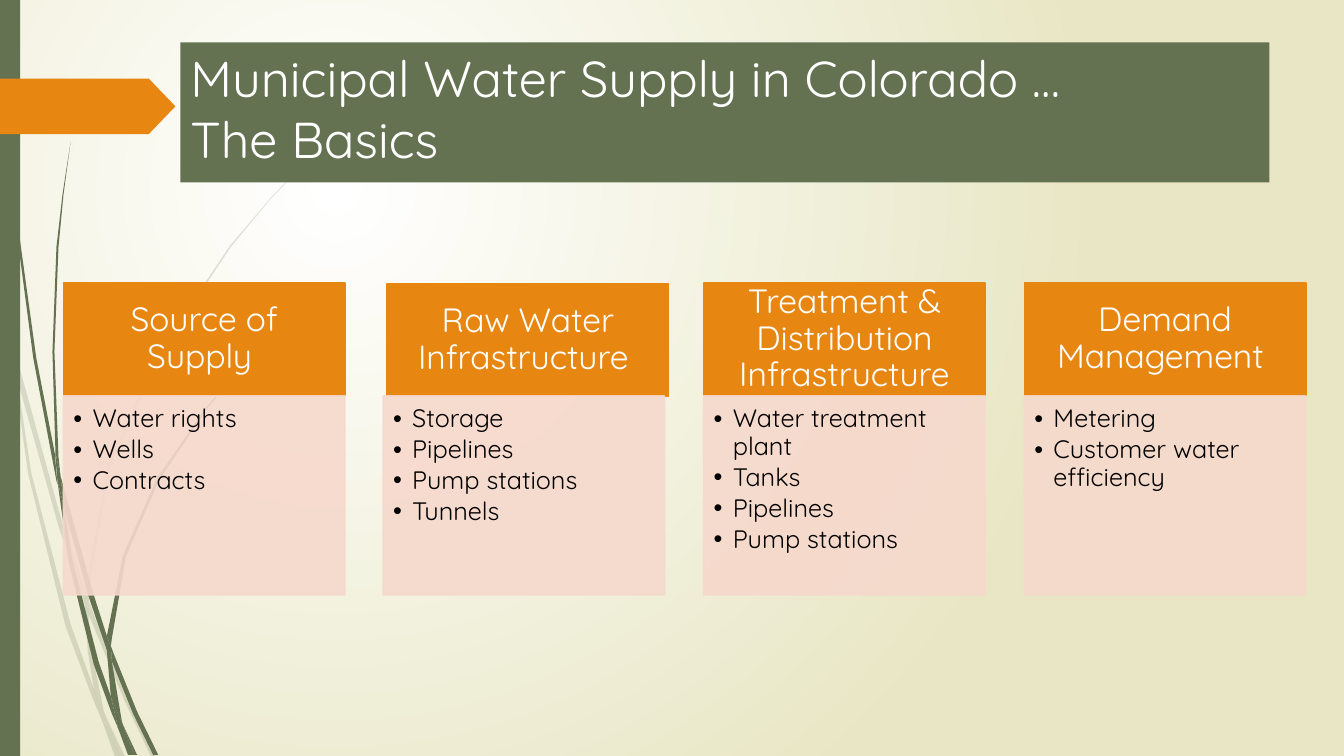
from pptx import Presentation
from pptx.dml.color import RGBColor
from pptx.enum.shapes import MSO_SHAPE
from pptx.enum.text import MSO_ANCHOR, PP_ALIGN
from pptx.oxml import parse_xml
from pptx.oxml.ns import nsdecls, qn
from pptx.util import Pt

PX = 9144
WIDTH, HEIGHT = 1333, 750
FONT = "Quicksand"
COLOURS = {
    "white": "FFFFFF",
    "sand": "E8E6C4",
    "green": "647252",
    "orange": "E78712",
    "blush": "F6D9CC",
    "black": "000000",
}

# Outlines of the pieces of grass
PALE_GRASS = [
    [(11, 350), (9, 322), (0, 282), (0, 299), (10, 344)],
    [(58, 522), (84, 599), (85, 586), (62, 520), (14, 345), (17, 376)],
    [(92, 607), (88, 596), (88, 610), (123, 694), (150, 751), (155, 751),
     (127, 692)],
    [(119, 751), (124, 751), (105, 711)],
    [(93, 683), (70, 619), (31, 469), (17, 376), (11, 350), (28, 470),
     (65, 621), (92, 693), (101, 714), (99, 707)],
    [(84, 599), (87, 646), (93, 683), (96, 692), (105, 711), (103, 706),
     (91, 646), (88, 610), (88, 608)],
    [(88, 584), (110, 462), (160, 349), (229, 245), (268, 198), (290, 175),
     (312, 154), (312, 153), (289, 175), (268, 197), (228, 244), (158, 348),
     (107, 461), (85, 584), (85, 586), (88, 596)],
    [(101, 714), (114, 751), (119, 751)],
    [(88, 608), (88, 610), (88, 596), (85, 586), (84, 599)],
    [(96, 692), (93, 683), (99, 707), (101, 714), (119, 751), (105, 711)],
]
DARK_GRASS = [
    [(7, 110), (17, 233), (33, 355), (56, 477), (57, 481), (55, 457),
     (55, 453), (36, 355), (19, 232), (8, 109), (5, 48), (4, 0), (3, 0),
     (4, 48)],
    [(88, 592), (106, 645), (106, 633), (106, 631), (93, 590), (60, 472),
     (64, 505)],
    [(113, 649), (110, 641), (111, 656), (132, 708), (152, 749), (157, 749),
     (136, 706)],
    [(110, 691), (98, 657), (72, 556), (64, 505), (57, 477), (68, 557),
     (93, 659), (111, 708), (117, 722), (116, 717)],
    [(60, 472), (58, 453), (54, 349), (58, 245), (63, 193), (70, 141),
     (62, 193), (56, 245), (52, 349), (55, 449)],
    [(133, 749), (136, 749), (122, 719)],
    [(57, 477), (64, 505), (60, 472), (55, 449), (55, 453)],
    [(111, 633), (125, 552), (158, 476), (205, 406), (231, 374), (245, 359),
     (261, 344), (260, 344), (245, 358), (231, 373), (204, 405), (156, 474),
     (122, 551), (106, 631), (110, 641)],
    [(117, 722), (127, 749), (131, 749)],
    [(106, 645), (110, 691), (116, 706), (122, 719), (121, 716), (111, 656),
     (109, 651)],
    [(106, 645), (109, 651), (111, 656), (110, 641), (106, 631), (106, 633)],
    [(116, 706), (110, 691), (116, 717), (117, 722), (130, 749), (133, 749),
     (122, 719)],
]

# Heading, shift of the heading box, bullets
CARDS = [
    ("Source of Supply ", (0, 0), ["Water rights", "Wells", "Contracts"]),
    ("Raw Water Infrastructure ", (4, 1),
     ["Storage", "Pipelines", "Pump stations", "Tunnels"]),
    ("Treatment & Distribution Infrastructure", (0, 0),
     ["Water treatment plant", "Tanks", "Pipelines", "Pump stations"]),
    ("Demand Management ", (0, 0), ["Metering", "Customer water efficiency"]),
]


def px(length):
    return length * PX


def colour(name):
    return RGBColor.from_string(COLOURS[name])


def paint(shape, name, opacity=100, outlined=False):
    shape.shadow.inherit = False
    fills = [shape.fill]
    if outlined:
        shape.line.width = Pt(1.25)
        fills.append(shape.line.fill)
    else:
        shape.line.fill.background()
    for fill in fills:
        fill.solid()
        fill.fore_color.rgb = colour(name)
    if opacity < 100:
        for tint in shape._element.spPr.iter(qn("a:srgbClr")):
            tint.append(parse_xml(
                f'<a:alpha {nsdecls("a")} val="{opacity * 1000}"/>'))


def add_box(page, box, name, kind=MSO_SHAPE.RECTANGLE, **look):
    shape = page.shapes.add_shape(kind, *map(px, box))
    paint(shape, name, **look)
    return shape


def set_text(shape, lines, size, name, insets, anchor=MSO_ANCHOR.TOP,
             align=PP_ALIGN.LEFT):
    frame = shape.text_frame
    frame.word_wrap = True
    frame.vertical_anchor = anchor
    (frame.margin_left, frame.margin_top,
     frame.margin_right, frame.margin_bottom) = map(px, insets)
    frame.text = "\n".join(lines)
    for para in frame.paragraphs:
        para.alignment = align
        for span in para.runs:
            span.font.name = FONT
            span.font.size = Pt(size)
            span.font.color.rgb = colour(name)
    return frame.paragraphs


def draw_background(page):
    fill = page.background.fill
    fill.gradient()
    for stop, name in zip(fill.gradient_stops, ("white", "sand")):
        stop.color.rgb = colour(name)
    gradient = next(page._element.iter(qn("a:gradFill")))
    gradient.remove(gradient.find(qn("a:lin")))
    gradient.append(parse_xml(
        f'<a:path {nsdecls("a")} path="circle"><a:fillToRect l="50000" '
        't="50000" r="100000" b="100000"/></a:path>'))


def draw_grass(page, outlines, opacity):
    for outline in outlines:
        builder = page.shapes.build_freeform(*outline[0], scale=PX)
        builder.add_line_segments(outline[1:], close=True)
        paint(builder.convert_to_shape(), "green", opacity)


def draw_decoration(page):
    draw_grass(page, PALE_GRASS, 20)
    draw_grass(page, DARK_GRASS, 100)
    add_box(page, (0, 0, 20, HEIGHT), "green")
    arrow = add_box(page, (0, 78, 174, 55), "orange", MSO_SHAPE.PENTAGON)
    arrow.adjustments[0] = 0.48


def draw_title(page, box):
    title = add_box(page, box, "green")
    set_text(title, ["Municipal Water Supply in Colorado … \vThe Basics"],
             36, "white", (10, 5, 10, 5))


def draw_card(page, box, heading, shift, bullets):
    left, top, width, height = box
    head_height, body_offset = 111, 112
    head = add_box(page, (left + shift[0], top + shift[1], width, head_height),
                   "orange", outlined=True)
    para = set_text(head, [heading], 24, "white", (19, 11, 19, 11),
                    MSO_ANCHOR.MIDDLE, PP_ALIGN.CENTER)[0]
    para.line_spacing = 0.9

    body = add_box(page, (left, top + body_offset, width, height - body_offset),
                   "blush", opacity=90, outlined=True)
    for para in set_text(body, bullets, 18, "black", (10, 10, 14, 16)):
        properties = para._p.get_or_add_pPr()
        properties.set("marL", str(px(19)))
        properties.set("indent", str(px(-19)))
        for bullet in ('buFont {} typeface="Arial"', 'buChar {} char="•"'):
            properties.append(parse_xml(f'<a:{bullet.format(nsdecls("a"))}/>'))
        para.line_spacing = 0.9
        para.space_after = Pt(2.7)


def draw_cards(page, box):
    """Spread the cards evenly over the box."""
    left, top, width, height = box
    card_width = 279
    for i, card in enumerate(CARDS):
        offset = i * (width - card_width) // (len(CARDS) - 1)
        draw_card(page, (left + offset, top, card_width, height), *card)


def main():
    deck = Presentation()
    deck.slide_width, deck.slide_height = px(WIDTH), px(HEIGHT)
    page = deck.slides.add_slide(deck.slide_layouts[6])
    draw_background(page)
    draw_decoration(page)
    draw_title(page, (179, 42, 1080, 139))
    draw_cards(page, (63, 281, 1232, 309))
    deck.save("out.pptx")


if __name__ == "__main__":
    main()
